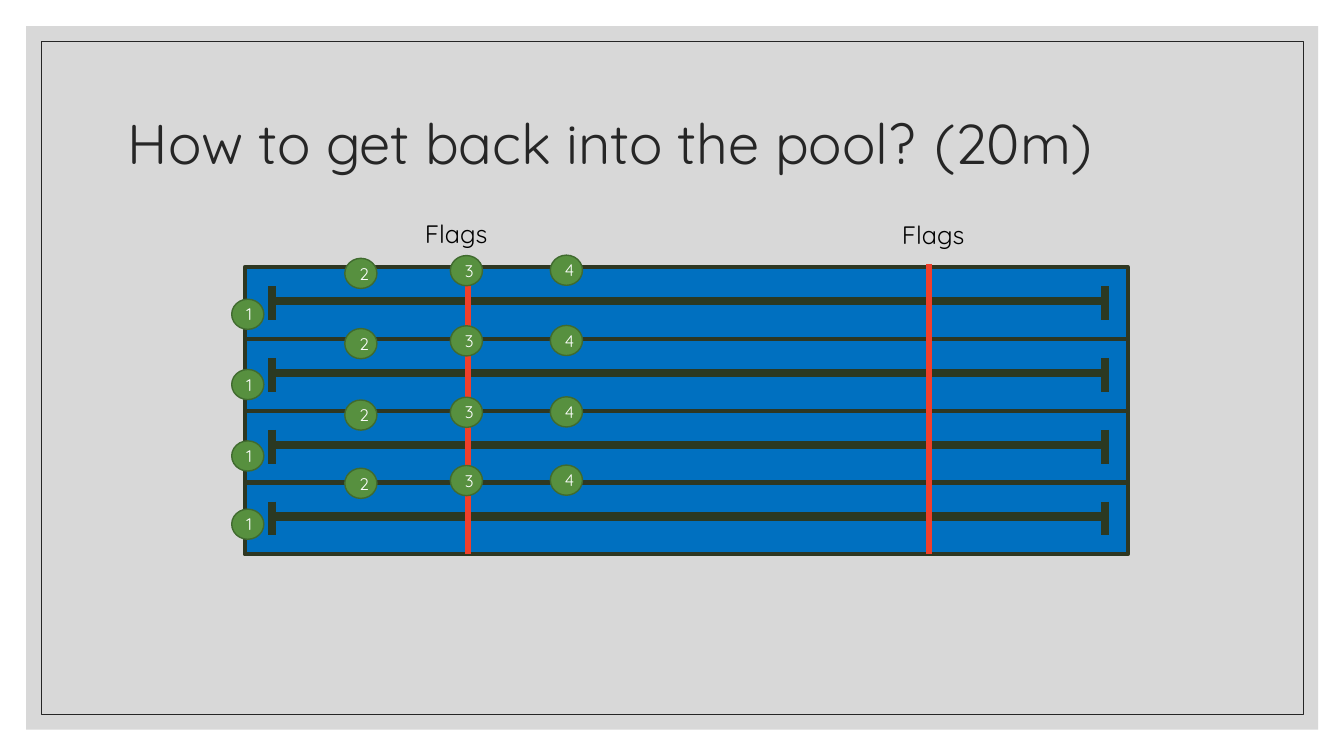
from lxml import etree
from pptx import Presentation, util as u
from pptx.dml.color import RGBColor
from pptx.enum import shapes, text
from pptx.oxml.ns import qn

HUES = {
    "mat": "BFBFBF", "ink": "262626", "water": "0070C0", "edge": "2E3722",
    "mark": "2B3922", "flag": "F03F2B", "swim": "57903F", "rim": "406B2F",
    "white": "FFFFFF", "black": "000000",
}


class Pen:
    """Draws styled elements on the slide, or in the group set as target."""

    def __init__(self, slide, font):
        self.slide = slide
        self.font = font
        self.target = slide.shapes

    def hue(self, name):
        return RGBColor.from_string(HUES[name])

    def group(self):
        self.target = self.slide.shapes.add_group_shape().shapes

    def page(self):
        self.target = self.slide.shapes

    def run(self, para, words, size, hue):
        run = para.add_run()
        run.text = words
        run.font.name = self.font
        run.font.size = u.Pt(size)
        run.font.color.rgb = self.hue(hue)

    def shape(self, kind, box, fill=None, line=None, width=1, alpha=None):
        item = self.target.add_shape(kind, *map(u.Cm, box))
        item.shadow.inherit = False
        if fill:
            item.fill.solid()
            item.fill.fore_color.rgb = self.hue(fill)
        else:
            item.fill.background()
        if alpha:
            tone = item.element.spPr.find(".//" + qn("a:srgbClr"))
            etree.SubElement(tone, qn("a:alpha"), val=str(alpha * 1000))
        if line:
            item.line.color.rgb = self.hue(line)
            item.line.width = u.Pt(width)
        else:
            item.line.fill.background()
        return item

    def rect(self, *box, **style):
        return self.shape(shapes.MSO_SHAPE.RECTANGLE, box, **style)

    def disc(self, words, *box):
        item = self.shape(shapes.MSO_SHAPE.OVAL, box, fill="swim", line="rim")
        item.text_frame.vertical_anchor = text.MSO_ANCHOR.MIDDLE
        para = item.text_frame.paragraphs[0]
        para.alignment = text.PP_ALIGN.CENTER
        self.run(para, words, 12, "white")

    def line(self, x1, y1, x2, y2, hue, width):
        item = self.target.add_connector(
            shapes.MSO_CONNECTOR.STRAIGHT, *map(u.Cm, (x1, y1, x2, y2)))
        item.line.color.rgb = self.hue(hue)
        item.line.width = u.Pt(width)
        etree.SubElement(item.element.spPr, qn("a:effectLst"))

    def label(self, words, *box):
        frame = self.target.add_textbox(*map(u.Cm, box)).text_frame
        frame.word_wrap = True
        frame.auto_size = text.MSO_AUTO_SIZE.SHAPE_TO_FIT_TEXT
        self.run(frame.paragraphs[0], words, 18, "black")

    def title(self, words, *box):
        item = self.slide.shapes.title
        item.left, item.top, item.width, item.height = map(u.Cm, box)
        # Bring the title in front of the frame.
        self.slide.shapes.element.append(item.element)
        frame = item.text_frame
        frame.auto_size = text.MSO_AUTO_SIZE.NONE
        frame.vertical_anchor = text.MSO_ANCHOR.MIDDLE
        para = frame.paragraphs[0]
        para.alignment = text.PP_ALIGN.LEFT
        para.line_spacing = 0.9
        self.run(para, words, 40, "ink")


def lane(pen, top):
    pen.group()
    pen.rect(6.17, top, 22.25, 1.81, fill="water", line="edge", width=3)
    mid = top + 0.86
    pen.line(6.78, mid, 27.84, mid, "mark", 6)
    for x in (6.86, 27.84):
        pen.line(x, top + 0.48, x, top + 1.33, "mark", 6)
    pen.page()


def team(pen, top):
    """Place the four numbered swimmers of one lane; top is that of the first."""
    pen.group()
    spots = ((5.84, 0), (8.69, -1.03), (11.35, -1.1), (13.87, -1.11))
    for num, (x, rise) in enumerate(spots, 1):
        pen.disc(str(num), x, top + rise, 0.81, 0.76)
    pen.page()


def main():
    deck = Presentation()
    deck.slide_width, deck.slide_height = u.Cm(33.87), u.Cm(19.05)
    pen = Pen(deck.slides.add_slide(deck.slide_layouts[5]), "Quicksand")

    pen.rect(0.66, 0.66, 32.56, 17.73, fill="mat", alpha=60)
    pen.rect(1.04, 1.04, 31.8, 16.97, line="ink", width=0.5)
    pen.title("How to get back into the pool?\t(20m)", 2.97, 1.78, 27.94, 3.81)

    for row in range(4):
        lane(pen, 6.73 + 1.81 * row)
    for x in (11.79, 23.42):
        pen.line(x, 6.65, x, 13.97, "flag", 4.5)
    for x, y in ((10.46, 5.38), (22.48, 5.41)):
        pen.label("Flags", x, y, 2.67, 1.02)
    for top in (7.54, 9.31, 11.11, 12.83):
        team(pen, top)

    deck.save("out.pptx")


if __name__ == "__main__":
    main()
